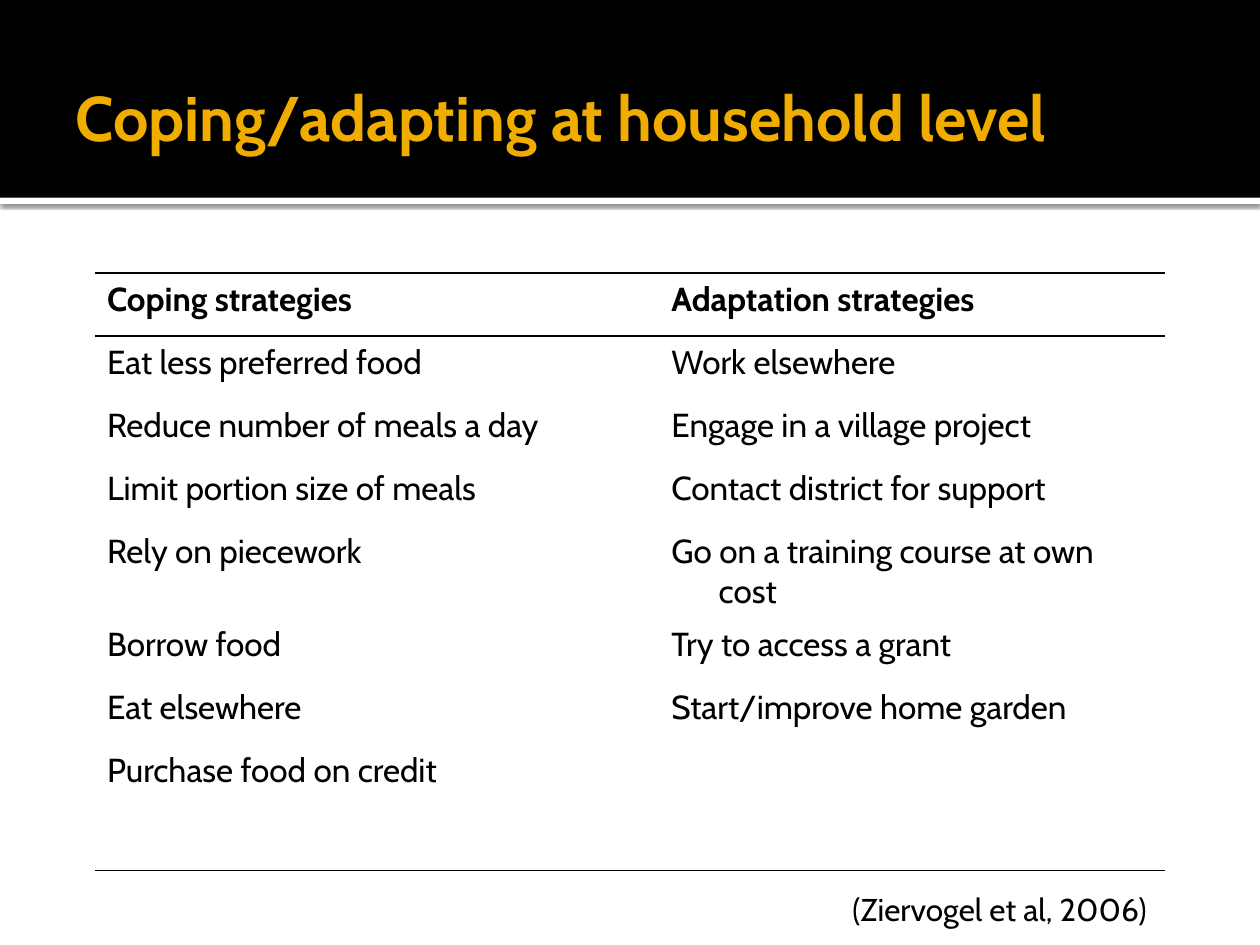
from lxml.etree import SubElement as Sub
from pptx import Presentation
from pptx.dml.color import RGBColor as Rgb
from pptx.enum.shapes import MSO_SHAPE as Kind
from pptx.enum.text import MSO_ANCHOR as Anchor, MSO_AUTO_SIZE as Fit, PP_ALIGN as Align
from pptx.oxml import parse_xml
from pptx.oxml.ns import nsdecls, qn
from pptx.util import Pt

FONT = "Cabin"
ROWS = [
    ("Coping strategies", "Adaptation strategies"),
    ("Eat less preferred food", "Work elsewhere"),
    ("Reduce number of meals a day", "Engage in a village project"),
    ("Limit portion size of meals", "Contact district for support"),
    ("Rely on piecework", "Go on a training course at own cost"),
    ("Borrow food", "Try to access a grant"),
    ("Eat elsewhere", "Start/improve home garden"),
    ("Purchase food on credit", ""),
]


def paint(tone):
    return Rgb.from_string(tone)


def write(para, text, size, tone="000000", bold=False):
    run = para.add_run()
    run.text = text
    font = run.font
    font.name, font.size, font.bold = FONT, Pt(size), bold
    font.color.rgb = paint(tone)


def add_bar(slide, x, y, w, h, tone):
    bar = slide.shapes.add_shape(Kind.RECTANGLE, Pt(x), Pt(y), Pt(w), Pt(h))
    bar.shadow.inherit = False
    bar.fill.solid()
    bar.fill.fore_color.rgb = paint(tone)
    bar.line.fill.background()
    return bar


def cast(shape):
    glow = shape.element.spPr.find(qn("a:effectLst"))
    shade = Sub(glow, qn("a:outerShdw"), blurRad=str(Pt(2.5)), dist=str(Pt(0.8)),
                dir="5400000", algn="t", rotWithShape="0")
    hue = Sub(shade, qn("a:srgbClr"), val="000000")
    Sub(hue, qn("a:alpha"), val="60000")


def add_head(slide, x, y, w, h):
    rim = 3.6
    cast(add_bar(slide, x, y + h, w, rim, "FFFFFF"))
    add_bar(slide, x, y, w, h, "000000")
    title = slide.shapes.title
    title.left, title.top = Pt(x + 36), Pt(y + 21.6)
    title.width, title.height = Pt(w - 72), Pt(90)
    slide.shapes.element.append(title.element)
    frame = title.text_frame
    frame.word_wrap, frame.auto_size = True, Fit.NONE
    frame.vertical_anchor = Anchor.MIDDLE
    frame.margin_left, frame.margin_right = Pt(7.2), Pt(3.6)
    frame.margin_top = frame.margin_bottom = Pt(3.6)
    para = frame.paragraphs[0]
    para.alignment = Align.LEFT
    write(para, "Coping/adapting at household level", 36, "F0AD00", True)


def rule(cell, sides):
    props = cell._tc.get_or_add_tcPr()
    for spot, side in enumerate("LRTB"):
        ink = '<a:solidFill><a:srgbClr val="000000"/></a:solidFill>'
        if side not in sides:
            ink = "<a:noFill/>"
        tag = f"a:ln{side}"
        line = parse_xml(f'<{tag} {nsdecls("a")} w="{Pt(1)}">{ink}</{tag}>')
        props.insert(spot, line)


def add_grid(slide, x, y, w, h):
    last = len(ROWS) - 1
    grid = slide.shapes.add_table(len(ROWS), 2, Pt(x), Pt(y), Pt(w), Pt(h)).table
    grid.first_row = grid.horz_banding = False
    left = 322.5
    grid.columns[0].width, grid.columns[1].width = Pt(left), Pt(w - left)
    for i, texts in enumerate(ROWS):
        grid.rows[i].height = Pt(72 if i == last else 36)
        sides = {0: "TB", 1: "T", last: "B"}.get(i, "")
        for j, text in enumerate(texts):
            cell = grid.cell(i, j)
            cell.fill.background()
            rule(cell, sides)
            para = cell.text_frame.paragraphs[0]
            props = para._p.get_or_add_pPr()
            props.set("marL", str(Pt(27)))
            props.set("indent", str(-Pt(27)))
            if text:
                write(para, text, 19, bold=i == 0)


def add_cite(slide, x, y, w, h):
    box = slide.shapes.add_textbox(Pt(x), Pt(y), Pt(w), Pt(h))
    frame = box.text_frame
    frame.word_wrap, frame.auto_size = True, Fit.SHAPE_TO_FIT_TEXT
    write(frame.paragraphs[0], "(Ziervogel et al, 2006)", 18)


def main():
    deck = Presentation()
    deck.slide_width, deck.slide_height = Pt(720), Pt(540)
    slide = deck.slides.add_slide(deck.slide_layouts[5])
    add_head(slide, 0, 0, 720, 113)
    add_grid(slide, 54, 156, 612, 324)
    add_cite(slide, 480, 505, 220, 29)
    deck.save("out.pptx")


if __name__ == "__main__":
    main()
